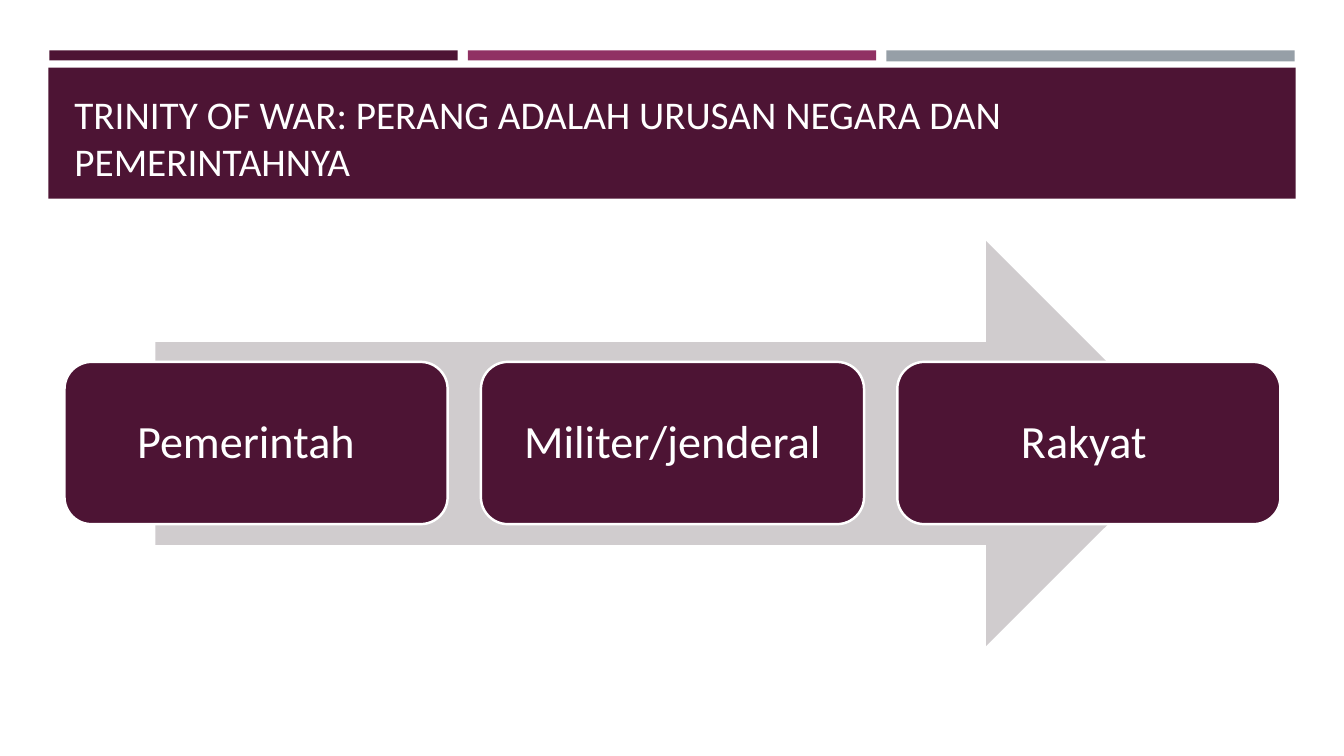
import pptx
import pptx.util
import pptx.dml.color
import pptx.enum.shapes
import pptx.enum.text
from dataclasses import dataclass

Inches = pptx.util.Inches
Pt = pptx.util.Pt
Shapes = pptx.enum.shapes.MSO_SHAPE
Anchor = pptx.enum.text.MSO_ANCHOR
Align = pptx.enum.text.PP_ALIGN


@dataclass(frozen=True)
class Theme:
    font: str = "Calibri"
    plum: str = "4D1434"
    berry: str = "903163"
    slate: str = "969FA7"
    arrow: str = "D0CCCE"
    white: str = "FFFFFF"
    title_size: int = 28
    card_size: int = 33
    card_line: float = 1.75


THEME = Theme()

# Content
TITLE = "TRINITY OF WAR: PERANG ADALAH URUSAN NEGARA DAN PEMERINTAHNYA"
# Each actor with the extra right inset that shifts its label to the left
ACTORS = [("Pemerintah", 0.2), ("Militer/jenderal", 0), ("Rakyat", 0.1)]
# Each bar with its colour and height
BARS = [(THEME.plum, 0.1), (THEME.berry, 0.1), (THEME.slate, 0.11)]

# Layout in inches
BAR_LEFT, BAR_TOP, BAR_WIDTH, BAR_STEP = 0.49, 0.5, 4.05, 4.15
CARD_LEFT, CARD_TOP, CARD_WIDTH, CARD_HEIGHT, CARD_STEP = 0.64, 3.59, 3.8, 1.61, 4.13
CARD_INSET = 0.22


def rgb(color):
    return pptx.dml.color.RGBColor.from_string(color)


def add_filled(slide, kind, left, top, width, height, color):
    shape = slide.shapes.add_shape(
        kind, Inches(left), Inches(top), Inches(width), Inches(height))
    shape.shadow.inherit = False
    shape.fill.solid()
    shape.fill.fore_color.rgb = rgb(color)
    shape.line.fill.background()
    return shape


def write(shape, text, size, align, anchor):
    frame = shape.text_frame
    frame.text = text
    frame.word_wrap = True
    frame.vertical_anchor = anchor
    paragraph = frame.paragraphs[0]
    paragraph.alignment = align
    font = paragraph.runs[0].font
    font.name = THEME.font
    font.size = Pt(size)
    font.color.rgb = rgb(THEME.white)
    return frame


def main():
    presentation = pptx.Presentation()
    presentation.slide_width = Inches(13.33)
    presentation.slide_height = Inches(7.5)
    slide = presentation.slides.add_slide(presentation.slide_layouts[6])

    # Top bars
    for index, (color, height) in enumerate(BARS):
        add_filled(slide, Shapes.RECTANGLE, BAR_LEFT + index * BAR_STEP,
                   BAR_TOP, BAR_WIDTH, height, color)

    # Title band
    add_filled(slide, Shapes.RECTANGLE, 0.48, 0.67, 12.37, 1.3, THEME.plum)
    title = slide.shapes.add_textbox(
        Inches(0.64), Inches(0.77), Inches(12.06), Inches(1.11))
    write(title, TITLE, THEME.title_size, Align.LEFT, Anchor.BOTTOM)

    # Arrow behind the cards
    add_filled(slide, Shapes.RIGHT_ARROW, 1.54, 2.39, 10.25, 4.02, THEME.arrow)

    # Actor cards
    for index, (name, extra_inset) in enumerate(ACTORS):
        card = add_filled(slide, Shapes.ROUNDED_RECTANGLE,
                          CARD_LEFT + index * CARD_STEP, CARD_TOP,
                          CARD_WIDTH, CARD_HEIGHT, THEME.plum)
        card.line.color.rgb = rgb(THEME.white)
        card.line.width = Pt(THEME.card_line)
        frame = write(card, name, THEME.card_size, Align.CENTER, Anchor.MIDDLE)
        frame.margin_left = Inches(CARD_INSET)
        frame.margin_right = Inches(CARD_INSET + extra_inset)
        frame.paragraphs[0].line_spacing = 0.9

    presentation.save("out.pptx")


if __name__ == "__main__":
    main()
